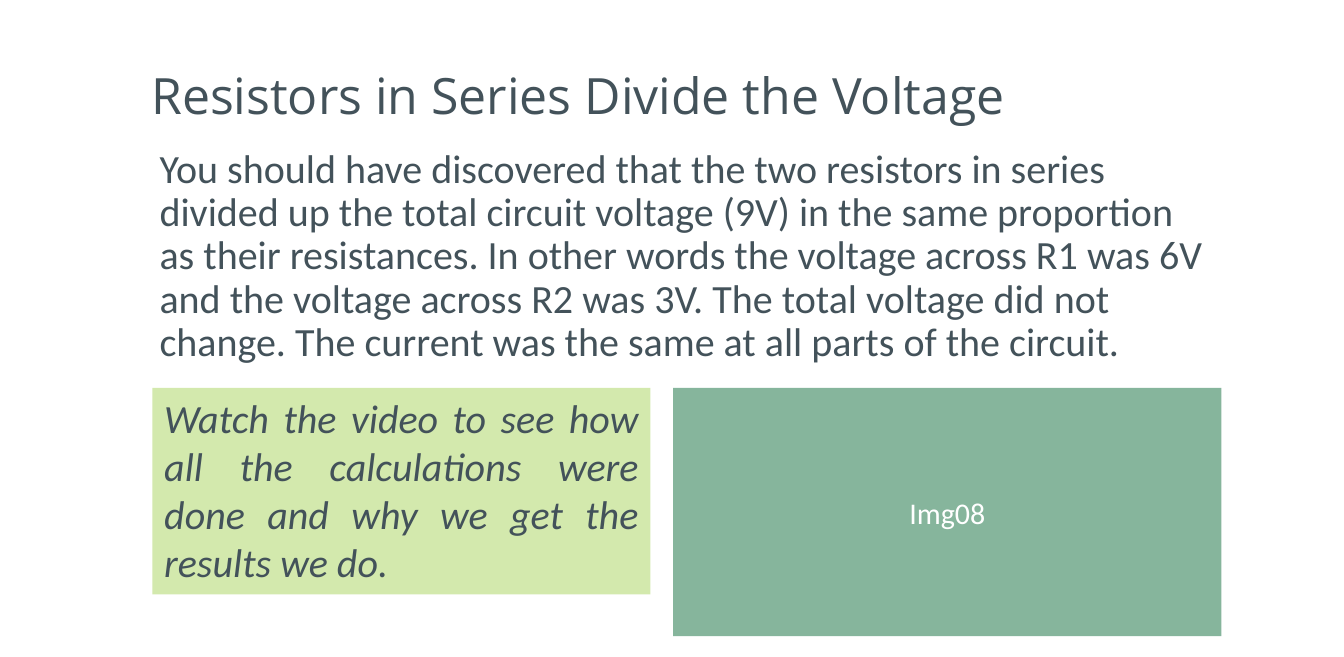
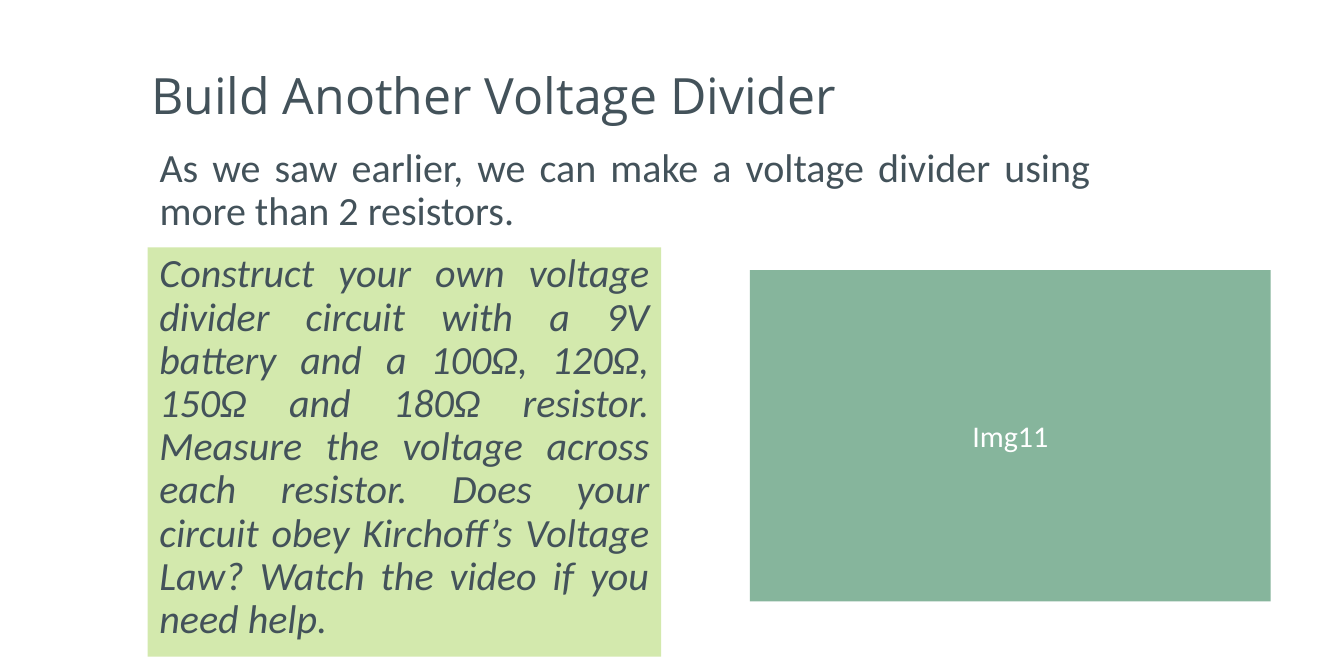
import dataclasses

import lxml.etree
import pptx
import pptx.dml.color
import pptx.enum.shapes
import pptx.enum.text
import pptx.oxml.ns
import pptx.util

Inches = pptx.util.Inches
ALIGN = pptx.enum.text.PP_ALIGN
ANCHOR = pptx.enum.text.MSO_ANCHOR


@dataclasses.dataclass(frozen=True)
class Theme:
    ink: str = "43525A"
    task_fill: str = "D3E9AD"
    media_fill: str = "86B59C"
    white: str = "FFFFFF"
    title_font: str = "Open Sans"
    body_font: str = "Calibri"
    title_size: float = 30
    body_size: float = 24
    label_size: float = 18
    tight_lines: float = 0.9
    space_before: float = 7.3


THEME = Theme()
SLIDE_WIDTH = Inches(11.2)
SLIDE_HEIGHT = Inches(394 / 72)  # 394 points
TITLE_BOX = (1.16, 0.29, 8.39, 1.06)


def color(value):
    return pptx.dml.color.RGBColor.from_string(value)


def write_text(shape, text, *, font=THEME.body_font, size=THEME.body_size,
               ink=THEME.ink, italic=False, align=ALIGN.LEFT, anchor=ANCHOR.TOP,
               line_spacing=1.0, space_before=0):
    """Fill a shape with one formatted paragraph."""
    frame = shape.text_frame
    frame.word_wrap = True
    frame.auto_size = pptx.enum.text.MSO_AUTO_SIZE.NONE
    frame.vertical_anchor = anchor
    paragraph = frame.paragraphs[0]
    paragraph.alignment = align
    paragraph.line_spacing = line_spacing
    paragraph.space_before = pptx.util.Pt(space_before)
    run = paragraph.add_run()
    run.text = text
    run.font.name = font
    run.font.size = pptx.util.Pt(size)
    run.font.italic = italic
    run.font.color.rgb = color(ink)
    return paragraph


def place(shape, box):
    shape.left, shape.top, shape.width, shape.height = map(Inches, box)


def add_title(slide, box, text):
    title = slide.shapes.title
    place(title, box)
    write_text(title, text, font=THEME.title_font, size=THEME.title_size,
               anchor=ANCHOR.MIDDLE, line_spacing=THEME.tight_lines)


def add_body(slide, box, text, align):
    body = slide.placeholders[1]
    place(body, box)
    paragraph = write_text(body, text, align=align, line_spacing=THEME.tight_lines,
                           space_before=THEME.space_before)
    # Plain paragraph: no bullet and no hanging indent
    properties = paragraph._p.get_or_add_pPr()
    properties.set("marL", "0")
    properties.set("indent", "0")
    lxml.etree.SubElement(properties, pptx.oxml.ns.qn("a:buNone"))


def add_panel(slide, box, fill, text, **text_format):
    panel = slide.shapes.add_shape(
        pptx.enum.shapes.MSO_SHAPE.RECTANGLE, *map(Inches, box))
    panel.shadow.inherit = False
    panel.fill.solid()
    panel.fill.fore_color.rgb = color(fill)
    panel.line.fill.background()
    write_text(panel, text, **text_format)


def add_task(slide, box, text, **spacing):
    add_panel(slide, box, THEME.task_fill, text, italic=True,
              align=ALIGN.JUSTIFY, **spacing)


def add_media(slide, box, label):
    add_panel(slide, box, THEME.media_fill, label, size=THEME.label_size,
              ink=THEME.white, align=ALIGN.CENTER, anchor=ANCHOR.MIDDLE)


def add_lesson(presentation, title, body, task, media, body_align=ALIGN.LEFT,
               task_spacing=None):
    """Build a slide with title, body, task and media; each part is (box, text)."""
    slide = presentation.slides.add_slide(presentation.slide_layouts[1])
    add_title(slide, TITLE_BOX, title)
    add_body(slide, *body, body_align)
    add_task(slide, *task, **(task_spacing or {}))
    add_media(slide, *media)


def main():
    presentation = pptx.Presentation()
    presentation.slide_width = SLIDE_WIDTH
    presentation.slide_height = SLIDE_HEIGHT

    # Result of the series circuit
    add_lesson(
        presentation,
        "Resistors in Series Divide the Voltage",
        body=((1.23, 1.19, 8.9, 2),
              "You should have discovered that the two resistors in series divided up "
              "the total circuit voltage (9V) in the same proportion as their "
              "resistances. In other words the voltage across R1 was 6V and the voltage "
              "across R2 was 3V. The total voltage did not change. The current was the "
              "same at all parts of the circuit."),
        task=((1.27, 3.23, 4.15, 1.72),
              "Watch the video to see how all the calculations were done and why we get "
              "the results we do."),
        media=((5.61, 3.23, 4.57, 2.07), "Img08"),
    )

    # Exercise with four resistors
    add_lesson(
        presentation,
        "Build Another Voltage Divider",
        body=((1.23, 1.18, 7.96, 1.17),
              "As we saw earlier, we can make a voltage divider using more than 2 "
              "resistors."),
        task=((1.23, 2.06, 4.28, 3.41),
              "Construct your own voltage divider circuit with a 9V battery and a 100Ω, "
              "120Ω, 150Ω and 180Ω resistor. Measure the voltage across each resistor. "
              "Does your circuit obey Kirchoff’s Voltage Law? Watch the video if you "
              "need help."),
        media=((6.25, 2.25, 4.34, 2.76), "Img11"),
        body_align=ALIGN.JUSTIFY,
        task_spacing={"line_spacing": THEME.tight_lines,
                      "space_before": THEME.space_before},
    )

    presentation.save("out.pptx")


if __name__ == "__main__":
    main()
